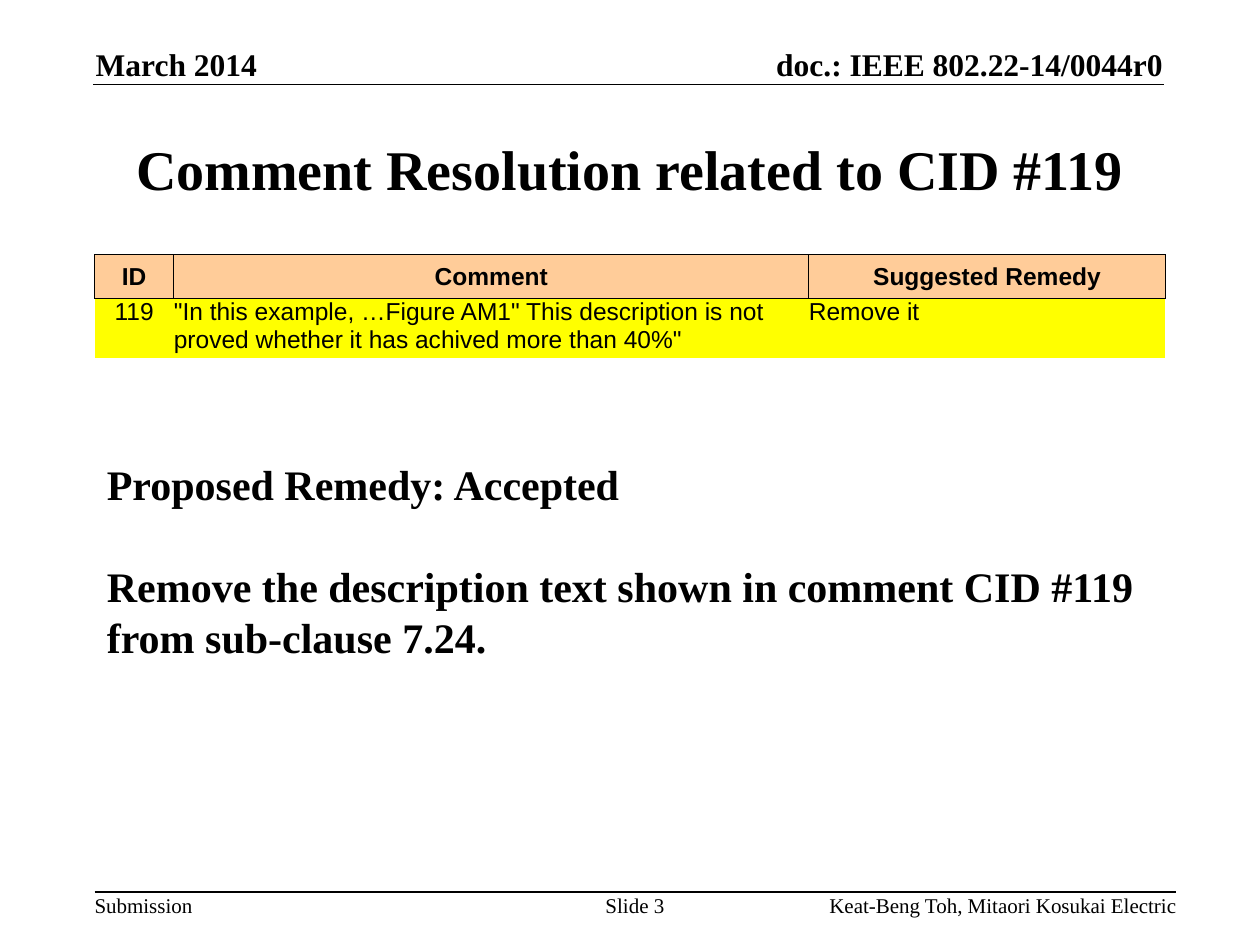
from dataclasses import dataclass

from lxml import etree
from pptx import Presentation
from pptx.dml.color import RGBColor
from pptx.enum.shapes import MSO_CONNECTOR
from pptx.enum.text import MSO_ANCHOR, PP_ALIGN
from pptx.oxml.ns import qn
from pptx.util import Inches, Pt

BLACK = RGBColor(0x00, 0x00, 0x00)
PEACH = RGBColor(0xFF, 0xCC, 0x99)
YELLOW = RGBColor(0xFF, 0xFF, 0x00)
SERIF, SANS = "Times New Roman", "Arial"
LEFT, CENTER, RIGHT = PP_ALIGN.LEFT, PP_ALIGN.CENTER, PP_ALIGN.RIGHT
TOP, MIDDLE, BOTTOM = MSO_ANCHOR.TOP, MSO_ANCHOR.MIDDLE, MSO_ANCHOR.BOTTOM
STRAIGHT = MSO_CONNECTOR.STRAIGHT
PLAIN_TABLE_STYLE = "{2D5ABB26-0587-4C30-8999-92F81FD0307C}"


@dataclass(frozen=True)
class Label:
    text: str
    left: float
    top: float
    width: float
    height: float
    size: int
    bold: bool = False
    align: PP_ALIGN = LEFT
    anchor: MSO_ANCHOR = TOP


@dataclass(frozen=True)
class Rule:
    left: float
    right: float
    y: float


@dataclass(frozen=True)
class TableRow:
    texts: tuple[str, ...]
    aligns: tuple[PP_ALIGN, ...]
    height: float
    fill: RGBColor
    bold: bool
    anchor: MSO_ANCHOR
    borders: tuple[str, ...]


LABELS = (
    Label("doc.: IEEE 802.22-14/0044r0", 5.63, 0.36, 3.6, 0.3, 18, True, RIGHT, BOTTOM),
    Label("March 2014", 0.76, 0.36, 1.29, 0.3, 18, True, LEFT, BOTTOM),
    Label("Submission", 0.75, 7.08, 0.78, 0.2, 12),
    Label("Slide 3", 4.71, 7.08, 0.66, 0.2, 12, align=CENTER),
    Label("Keat-Beng Toh, Mitaori Kosukai Electric", 6.56, 7.08, 2.78, 0.2, 12, align=RIGHT),
    Label("Comment Resolution related to CID #119", 0.75, 0.75, 8.5, 1.17, 32, True, CENTER, MIDDLE),
)
RULES = (Rule(0.74, 9.24, 0.67), Rule(0.75, 9.33, 7.08))
COLUMN_WIDTHS = (0.63, 5.04, 2.83)
TABLE_ROWS = (
    TableRow(("ID", "Comment", "Suggested Remedy"), (CENTER,) * 3,
             0.35, PEACH, True, MIDDLE, ("lnL", "lnR", "lnT", "lnB")),
    TableRow(("119",
              '"In this example, …Figure AM1" This description is not proved '
              'whether it has achived more than 40%"',
              "Remove it"), (CENTER, LEFT, LEFT),
             0.47, YELLOW, False, TOP, ("lnT",)),
)
REMEDY_LINES = (
    ("Proposed Remedy: Accepted", 0),
    ("Remove the description text shown in comment CID #119", 29),
    ("from sub-clause 7.24.", 0),
)


def add_run(p, text: str, font: str, size: int, bold: bool) -> None:
    r = p.add_run()
    r.text = text
    r.font.name = font
    r.font.size = Pt(size)
    r.font.bold = bold
    r.font.color.rgb = BLACK


def add_label(slide, label: Label) -> None:
    sp = slide.shapes.add_textbox(Inches(label.left), Inches(label.top),
                                  Inches(label.width), Inches(label.height))
    tf = sp.text_frame
    tf.word_wrap = False
    tf.vertical_anchor = label.anchor
    tf.margin_left = tf.margin_right = tf.margin_top = tf.margin_bottom = 0
    p = tf.paragraphs[0]
    p.alignment = label.align
    add_run(p, label.text, SERIF, label.size, label.bold)


def add_rule(slide, rule: Rule) -> None:
    line = slide.shapes.add_connector(STRAIGHT, Inches(rule.left), Inches(rule.y),
                                      Inches(rule.right), Inches(rule.y))
    line.line.color.rgb = BLACK
    line.line.width = Pt(1)
    etree.SubElement(line._element.spPr, qn("a:effectLst"))


def add_border(cell, side: str) -> None:
    tc_pr = cell._tc.get_or_add_tcPr()
    ln = etree.SubElement(tc_pr, qn(f"a:{side}"), w=str(Pt(0.5)))
    fill = etree.SubElement(ln, qn("a:solidFill"))
    etree.SubElement(fill, qn("a:srgbClr"), val=str(BLACK))


def add_comment_table(slide) -> None:
    height = sum(row.height for row in TABLE_ROWS)
    frame = slide.shapes.add_table(len(TABLE_ROWS), len(COLUMN_WIDTHS), Inches(0.75),
                                   Inches(2.02), Inches(sum(COLUMN_WIDTHS)), Inches(height))
    table = frame.table
    table.first_row = table.horz_banding = False
    table._tbl.tblPr.find(qn("a:tableStyleId")).text = PLAIN_TABLE_STYLE
    for column, width in zip(table.columns, COLUMN_WIDTHS):
        column.width = Inches(width)
    for i, row in enumerate(TABLE_ROWS):
        table.rows[i].height = Inches(row.height)
        for cell, text, align in zip(table.rows[i].cells, row.texts, row.aligns):
            cell.margin_left = cell.margin_right = cell.margin_top = cell.margin_bottom = 0
            cell.vertical_anchor = row.anchor
            for side in row.borders:
                add_border(cell, side)
            cell.fill.solid()
            cell.fill.fore_color.rgb = row.fill
            p = cell.text_frame.paragraphs[0]
            p.alignment = align
            add_run(p, text, SANS, 14, row.bold)


def add_remedy(slide) -> None:
    sp = slide.shapes.add_textbox(Inches(0.75), Inches(3.59), Inches(8.63), Inches(1.72))
    tf = sp.text_frame
    tf.word_wrap = False
    for i, (text, space_before) in enumerate(REMEDY_LINES):
        p = tf.add_paragraph() if i else tf.paragraphs[0]
        p.line_spacing = Pt(29)
        p.space_before = Pt(space_before)
        add_run(p, text, SERIF, 24, True)


def main() -> None:
    prs = Presentation()
    prs.slide_width, prs.slide_height = Inches(10), Inches(7.5)
    slide = prs.slides.add_slide(prs.slide_layouts[6])
    for rule in RULES:
        add_rule(slide, rule)
    for label in LABELS:
        add_label(slide, label)
    add_remedy(slide)
    add_comment_table(slide)
    prs.save("out.pptx")


if __name__ == "__main__":
    main()
